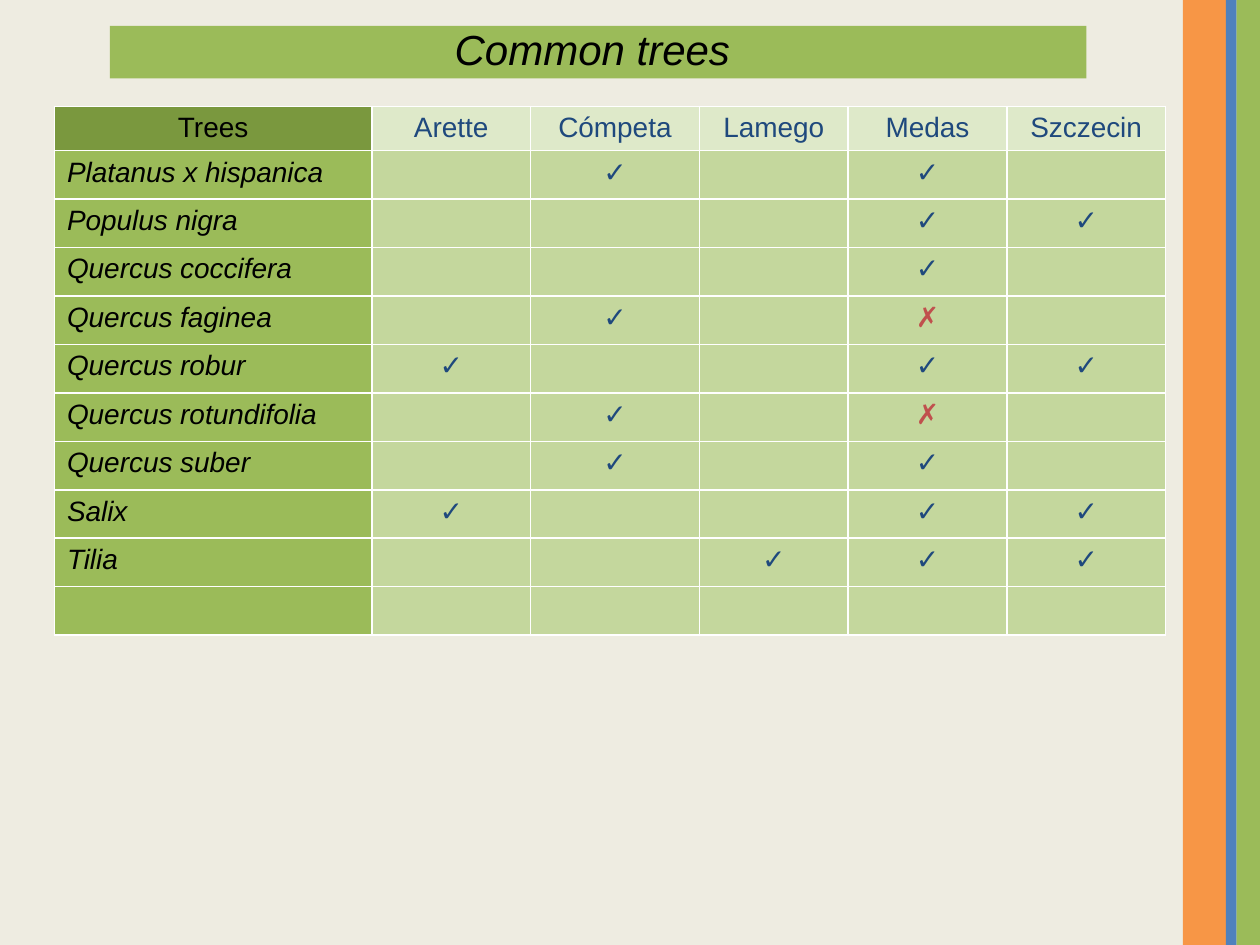
from lxml import etree
from pptx import Presentation
from pptx.dml.color import RGBColor
from pptx.enum import shapes, text
from pptx.oxml import ns
from pptx.util import Pt

CREAM = RGBColor(0xEE, 0xEC, 0xE1)
ORANGE = RGBColor(0xF7, 0x96, 0x46)
BLUE = RGBColor(0x4F, 0x81, 0xBD)
GREEN = RGBColor(0x9B, 0xBB, 0x59)
DARK_GREEN = RGBColor(0x7A, 0x98, 0x3E)
PALE_GREEN = RGBColor(0xDE, 0xE9, 0xC9)
LIGHT_GREEN = RGBColor(0xC4, 0xD7, 0x9D)
NAVY = RGBColor(0x1F, 0x49, 0x7D)
RED = RGBColor(0xC0, 0x50, 0x4D)
BLACK = RGBColor(0, 0, 0)
WHITE = RGBColor(0xFF, 0xFF, 0xFF)

TOWNS = ["Arette", "Cómpeta", "Lamego", "Medas", "Szczecin"]
# One mark per town; a dot stands for an empty cell
TREES = [
    ("Platanus x hispanica", ".✓.✓."),
    ("Populus nigra", "...✓✓"),
    ("Quercus coccifera", "...✓."),
    ("Quercus faginea", ".✓.✗."),
    ("Quercus robur", "✓..✓✓"),
    ("Quercus rotundifolia", ".✓.✗."),
    ("Quercus suber", ".✓.✓."),
    ("Salix", "✓..✓✓"),
    ("Tilia", "..✓✓✓"),
    ("", "....."),
]
COLUMN_WIDTHS = [181.4, 90.7, 96.5, 85, 90.7, 90.7]
HEADER_HEIGHT, ROW_HEIGHT = 25.2, 27.72


def add_block(page, left, top, width, height, color):
    block = page.shapes.add_shape(shapes.MSO_SHAPE.RECTANGLE,
                                  Pt(left), Pt(top), Pt(width), Pt(height))
    block.shadow.inherit = False
    block.fill.solid()
    block.fill.fore_color.rgb = color
    block.line.fill.background()
    return block


def fill_cell(cell, words, fill, color, italic, align):
    # Borders come before the fill in the cell properties
    properties = cell._tc.get_or_add_tcPr()
    for side in ("lnL", "lnR", "lnT", "lnB"):
        line = etree.SubElement(properties, ns.qn("a:" + side), w=str(Pt(1)))
        solid = etree.SubElement(line, ns.qn("a:solidFill"))
        etree.SubElement(solid, ns.qn("a:srgbClr"), val=str(WHITE))
    cell.fill.solid()
    cell.fill.fore_color.rgb = fill
    para = cell.text_frame.paragraphs[0]
    if words:
        para.text = words
    para.alignment = align
    para.font.name = "Arial"
    para.font.size = Pt(16)
    para.font.bold = False
    para.font.italic = italic
    para.font.color.rgb = color


deck = Presentation()
deck.slide_width, deck.slide_height = Pt(720), Pt(540)
page = deck.slides.add_slide(deck.slide_layouts[6])
page.background.fill.solid()
page.background.fill.fore_color.rgb = CREAM

# Stripes down the right edge
for left, width, color in [(676, 25, ORANGE), (706.5, 13.5, GREEN), (700.5, 6, BLUE)]:
    add_block(page, left, 0, width, 540, color)

# Table of trees by town
table = page.shapes.add_table(
    len(TREES) + 1, len(COLUMN_WIDTHS), Pt(31.1), Pt(60.8), Pt(sum(COLUMN_WIDTHS)),
    Pt(HEADER_HEIGHT + ROW_HEIGHT * len(TREES))).table
for column, width in zip(table.columns, COLUMN_WIDTHS):
    column.width = Pt(width)
for row in table.rows:
    row.height = Pt(ROW_HEIGHT)
table.rows[0].height = Pt(HEADER_HEIGHT)

CENTER, LEFT = text.PP_ALIGN.CENTER, text.PP_ALIGN.LEFT
fill_cell(table.cell(0, 0), "Trees", DARK_GREEN, BLACK, False, CENTER)
for c, town in enumerate(TOWNS, 1):
    fill_cell(table.cell(0, c), town, PALE_GREEN, NAVY, False, CENTER)
for r, (tree, marks) in enumerate(TREES, 1):
    fill_cell(table.cell(r, 0), tree, GREEN, BLACK, True, LEFT)
    for c, mark in enumerate(marks, 1):
        fill_cell(table.cell(r, c), mark.strip("."), LIGHT_GREEN,
                  RED if mark == "✗" else NAVY, False, CENTER)

# Title bar
title = add_block(page, 62.8, 14.8, 558, 30, GREEN)
title.text_frame.word_wrap = True
title.text_frame.vertical_anchor = text.MSO_ANCHOR.MIDDLE
para = title.text_frame.paragraphs[0]
para.text = "Common trees "
para.alignment = CENTER
para.line_spacing = 0.9
para.font.name = "Arial"
para.font.size = Pt(24)
para.font.italic = True
para.font.color.rgb = BLACK

deck.save("out.pptx")
